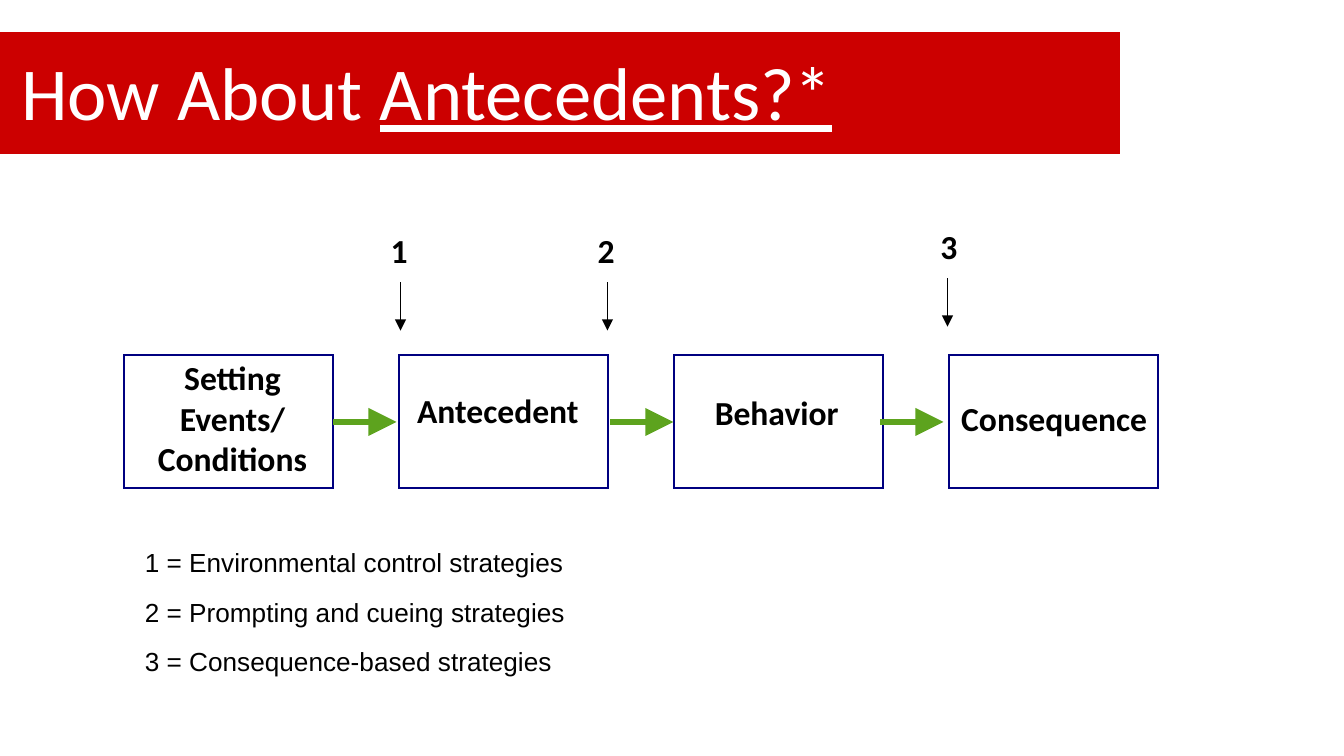
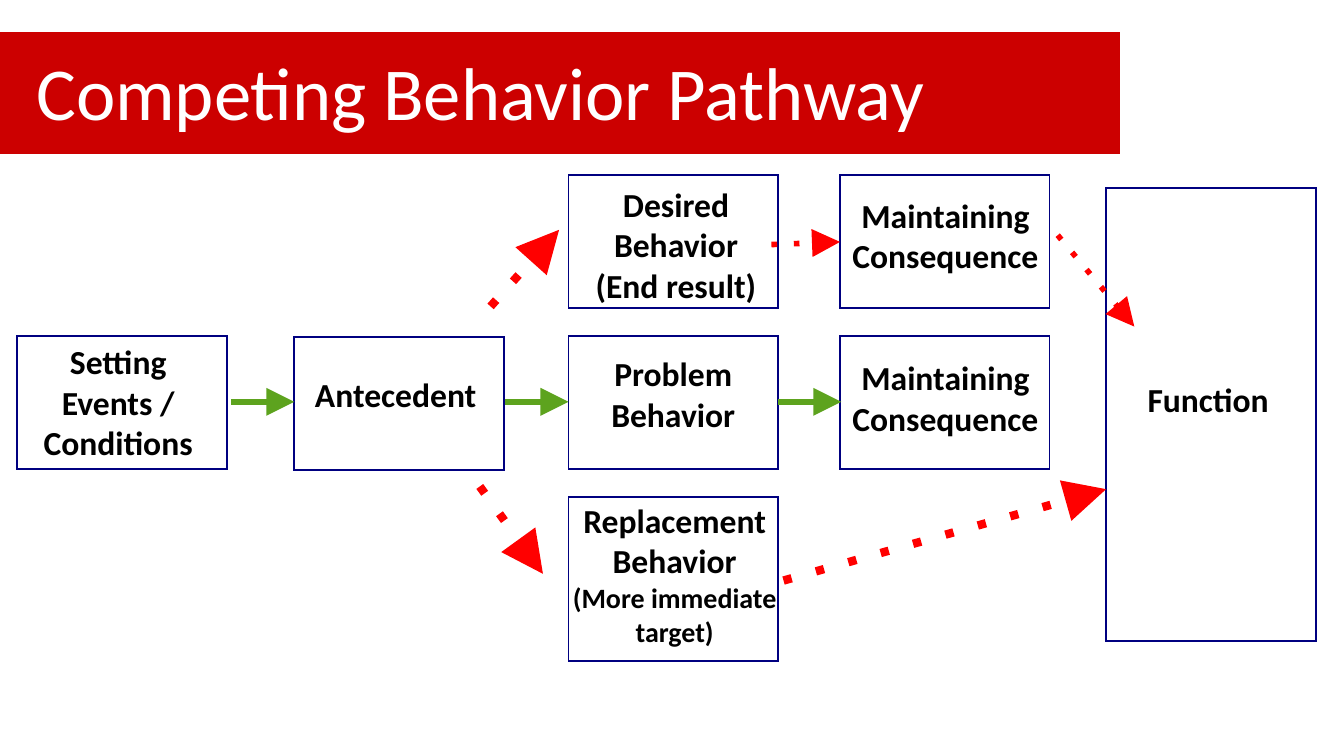
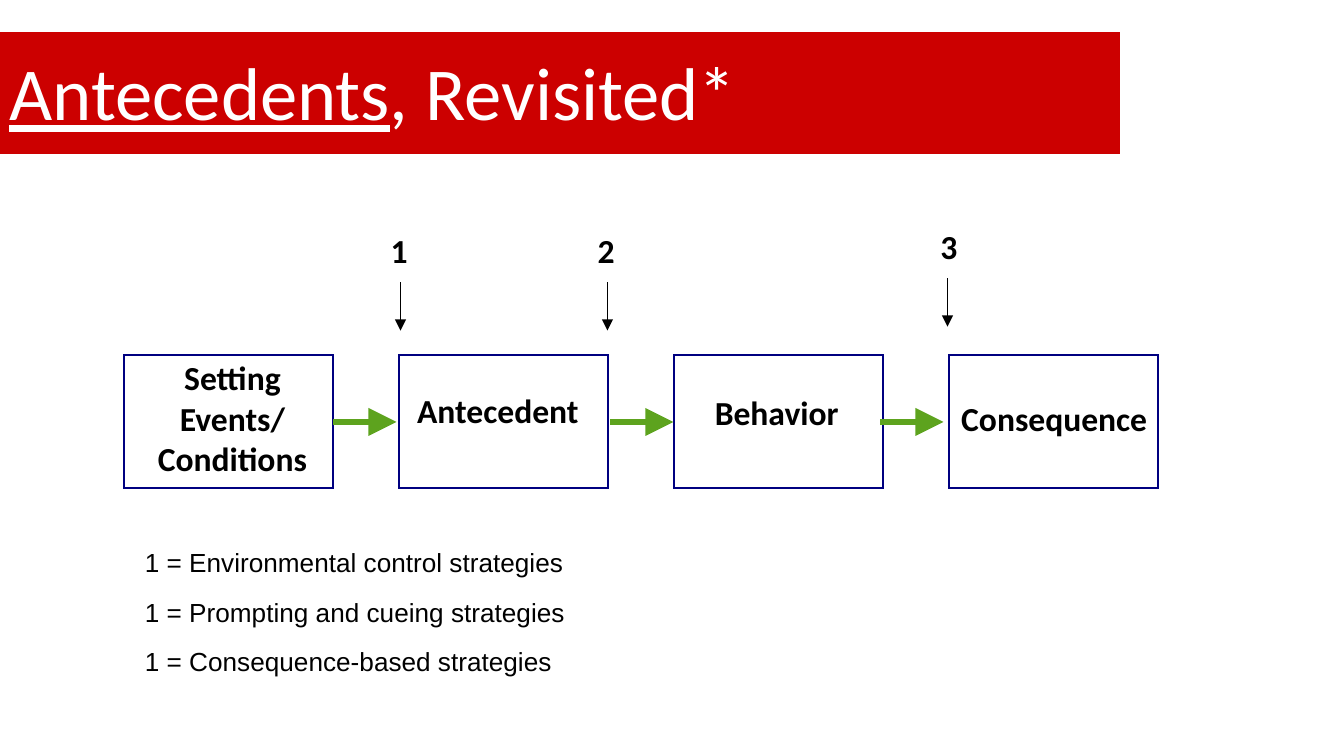
import pptx
import pptx.dml.color
import pptx.enum.shapes
import pptx.enum.text
import pptx.oxml.ns
import pptx.util
import lxml.etree

Inches, Pt = pptx.util.Inches, pptx.util.Pt
color = pptx.dml.color.RGBColor.from_string
RECTANGLE = pptx.enum.shapes.MSO_SHAPE.RECTANGLE
STRAIGHT = pptx.enum.shapes.MSO_CONNECTOR.STRAIGHT
NO_FIT = pptx.enum.text.MSO_AUTO_SIZE.NONE
LEFT, CENTER = pptx.enum.text.PP_ALIGN.LEFT, pptx.enum.text.PP_ALIGN.CENTER
MIDDLE = pptx.enum.text.MSO_ANCHOR.MIDDLE

RED, WHITE, BLACK = "CC0000", "FFFFFF", "000000"
NAVY, GREEN, BRIGHT_RED = "000080", "5DA31E", "FF0000"
BOX_WIDTH, BOX_HEIGHT = 1.56, 0.99


def add_text(page, left, top, width, height, lines, font="Calibri", size=18, bold=True, align=CENTER):
    """Each line is a string, or a (string, size) pair."""
    frame = page.shapes.add_textbox(Inches(left), Inches(top), Inches(width), Inches(height)).text_frame
    frame.word_wrap = True
    for index, line in enumerate(lines):
        text, line_size = line if isinstance(line, tuple) else (line, size)
        para = frame.add_paragraph() if index else frame.paragraphs[0]
        para.text = text
        para.alignment = align
        font_style = para.runs[0].font
        font_style.name, font_style.size, font_style.bold = font, Pt(line_size), bold
        font_style.color.rgb = color(BLACK)


def add_arrow(page, start, end, line_color, weight, dotted=False, head="lg"):
    arrow = page.shapes.add_connector(STRAIGHT, *map(Inches, start + end))
    arrow.line.color.rgb = color(line_color)
    arrow.line.width = Pt(weight)
    line = arrow.line._get_or_add_ln()
    if dotted:
        lxml.etree.SubElement(line, pptx.oxml.ns.qn("a:prstDash"), val="dot")
    lxml.etree.SubElement(line, pptx.oxml.ns.qn("a:tailEnd"), type="triangle", w=head, len=head)
    lxml.etree.SubElement(arrow.element.spPr, pptx.oxml.ns.qn("a:effectLst"))


deck = pptx.Presentation()
deck.slide_width = Inches(10)
deck.slide_height = deck.slide_width * 9 // 16
layout = deck.slide_layouts[5]

# Titles: left, width, spans of (text, underlined)
titles = [
    (0.06, 8.73, [("How About ", False), ("Antecedents?*", True)]),
    (0.17, 8.17, [("Competing Behavior Pathway", False)]),
    (-0.03, 8.73, [("Antecedents", True), (", Revisited*", False)]),
]

# Boxes: left, top, height, then the label's left, top, width and lines
chain_columns = [0.92 + 6.14 / 3 * column for column in range(4)]
chain_top, chain_middle = 2.64, 3.14
chain_labels = [
    (0.98, 2.61, 1.5, ["Setting Events/", "Conditions"]),
    (2.87, 2.85, 1.67, ["Antecedent"]),
    (5.03, 2.87, 1.5, ["Behavior"]),
    (6.93, 2.91, 1.83, ["Consequence"]),
]
chain_boxes = [(left, chain_top, BOX_HEIGHT, *label) for left, label in zip(chain_columns, chain_labels)]

setting, antecedent, behavior, consequence, function = 0.13, 2.19, 4.23, 6.25, 8.23
desired_row, problem_row, replacement_row = [1.3 + 1.2 * row for row in range(3)]
maintaining = ["Maintaining", "Consequence"]
pathway_boxes = [
    (setting, problem_row, BOX_HEIGHT, 0.13, 2.49, 1.5, ["Setting Events /", "Conditions"]),
    (antecedent, 2.51, BOX_HEIGHT, 2.11, 2.73, 1.67, ["Antecedent"]),
    (behavior, desired_row, BOX_HEIGHT, 4.24, 1.32, 1.58, ["Desired Behavior (End result)"]),
    (behavior, problem_row, BOX_HEIGHT, 4.26, 2.58, 1.5, ["Problem Behavior"]),
    (behavior, replacement_row, 1.22, 4.11, 3.67, 1.82,
     ["Replacement Behavior", ("(More immediate target)", 15)]),
    (consequence, desired_row, BOX_HEIGHT, 6.12, 1.4, 1.83, maintaining),
    (consequence, problem_row, BOX_HEIGHT, 6.12, 2.61, 1.83, maintaining),
    (function, 1.4, 3.37, 8.44, 2.77, 1.33, ["Function"]),
]

# Green arrows: left ends and height on the page, all of one length
green_arrows = [([2.48, 4.54, 6.55], chain_middle), ([1.72, 3.76, 5.79], 2.99)]
green_length = 0.47

# Dotted arrows of the pathway: start, end, weight
dotted_arrows = [
    ((3.65, 2.28), (4.16, 1.71), 4.5),
    ((5.83, 4.32), (8.23, 3.64), 4.5),
    ((3.57, 3.62), (4.04, 4.27), 4.5),
    ((5.74, 1.82), (6.25, 1.8), 3),
    ((7.87, 1.75), (8.44, 2.43), 3),
]

# Numbered markers: number, text centre, arrow x, text top
markers = [("1", 2.97, 2.98, 1.66), ("2", 4.51, 4.52, 1.66), ("3", 7.06, 7.05, 1.63)]
strategies = ["Environmental control", "Prompting and cueing", "Consequence-based"]

for page_index, (title_left, title_width, spans) in enumerate(titles):
    page = deck.slides.add_slide(layout)
    is_pathway = page_index == 1

    # Red band, built once and placed on the shared layout
    if page_index == 0:
        band = page.shapes.add_shape(RECTANGLE, Inches(-0.08), Inches(0.23), Inches(8.42), Inches(0.92))
        band.shadow.inherit = False
        band.fill.solid()
        band.fill.fore_color.rgb = color(RED)
        band.line.color.rgb = color(WHITE)
        band.line.width = Pt(0.75)
        layout.shapes.element.insert(2, band.element)

    # Title
    title = page.shapes.title
    title.left, title.top = Inches(title_left), Inches(0.27)
    title.width, title.height = Inches(title_width), Inches(0.81)
    title.text_frame.auto_size = NO_FIT
    title.text_frame.vertical_anchor = MIDDLE
    para = title.text_frame.paragraphs[0]
    para.alignment = LEFT
    for text, underlined in spans:
        span = para.add_run()
        span.text = text
        span.font.name, span.font.size = "Calibri", Pt(40)
        span.font.underline = underlined
        span.font.color.rgb = color(WHITE)

    # Boxes with square corners, and their labels
    for left, top, height, text_left, text_top, text_width, lines in pathway_boxes if is_pathway else chain_boxes:
        box = page.shapes.add_shape(RECTANGLE, Inches(left), Inches(top), Inches(BOX_WIDTH), Inches(height))
        box.shadow.inherit = False
        box.fill.background()
        box.line.color.rgb = color(NAVY)
        box.line.width = Pt(1)
        lxml.etree.SubElement(box.line._get_or_add_ln(), pptx.oxml.ns.qn("a:miter"), lim="800000")
        add_text(page, text_left, text_top, text_width, 0.77, lines,
                 align=LEFT if lines == ["Function"] else CENTER)

    # Arrows along the chain
    starts, middle = green_arrows[is_pathway]
    for start in starts:
        add_arrow(page, (start, middle), (start + green_length, middle), GREEN, 3)

    if is_pathway:
        for start, end, weight in dotted_arrows:
            add_arrow(page, start, end, BRIGHT_RED, weight, dotted=True)
        continue

    # Markers above the chain
    for number, center, arrow_x, top in markers:
        add_text(page, center - 0.25, top, 0.5, 0.44, [number])
        add_arrow(page, (arrow_x, top + 0.44), (arrow_x, top + 0.8), BLACK, 0.75, head="med")

    # Legend; the last page numbers every strategy 1
    for row, strategy in enumerate(strategies):
        number = row + 1 if page_index == 0 else 1
        add_text(page, 0.98, 4.02 + 0.73 / 2 * row, 3.94, 0.34, [f"{number} = {strategy} strategies"],
                 font="Arial", size=14, bold=False, align=LEFT)

deck.save("out.pptx")
